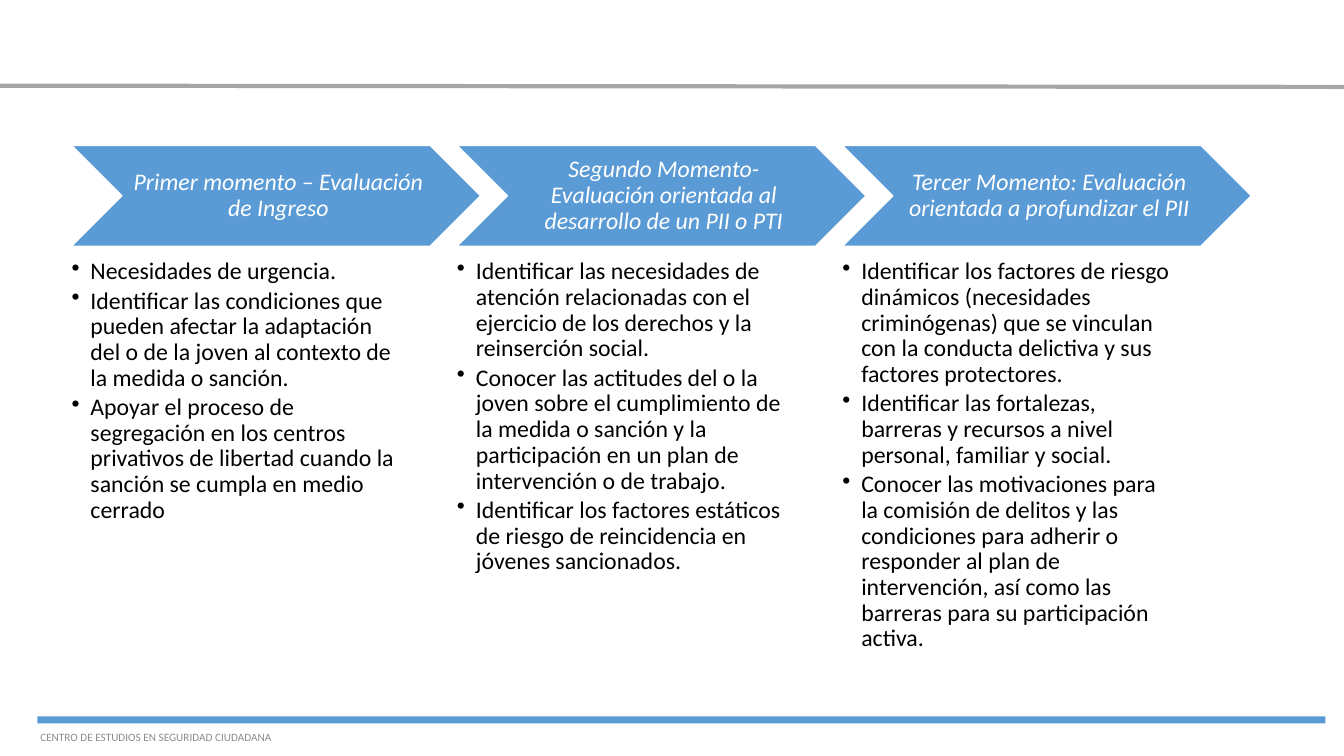
import pptx
import pptx.util
import pptx.dml.color
import pptx.enum.shapes
import pptx.enum.text
from lxml import etree

Pt = pptx.util.Pt
RGBColor = pptx.dml.color.RGBColor
MSO_SHAPE = pptx.enum.shapes.MSO_SHAPE
PP_ALIGN = pptx.enum.text.PP_ALIGN
MSO_ANCHOR = pptx.enum.text.MSO_ANCHOR

BLUE = RGBColor(0x5B, 0x9B, 0xD5)
RULE_GRAY = RGBColor(0xA6, 0xA6, 0xA6)
FOOTER_GRAY = RGBColor(0x8C, 0x8C, 0x8C)
WHITE = RGBColor(0xFF, 0xFF, 0xFF)
BLACK = RGBColor(0x00, 0x00, 0x00)

FONT = "Calibri"
BODY_SIZE = 17
BULLET_INDENT = 13.5
SLIDE_WIDTH, SLIDE_HEIGHT = 960, 540

MOMENTS = [
    ("Primer momento – Evaluación de Ingreso", [
        "Necesidades de urgencia.",
        "Identificar las condiciones que pueden afectar la adaptación del o de la joven "
        "al contexto de la medida o sanción.",
        "Apoyar el proceso de segregación en los centros privativos de libertad cuando "
        "la sanción se cumpla en medio cerrado",
    ]),
    ("Segundo Momento- Evaluación orientada al desarrollo de un PII o PTI", [
        "Identificar las necesidades de atención relacionadas con el ejercicio de los "
        "derechos y la reinserción social.",
        "Conocer las actitudes del o la joven sobre el cumplimiento de la medida o sanción "
        "y la participación en un plan de intervención o de trabajo.",
        "Identificar los factores estáticos de riesgo de reincidencia en jóvenes sancionados.",
    ]),
    ("Tercer Momento: Evaluación orientada a profundizar el PII", [
        "Identificar los factores de riesgo dinámicos (necesidades criminógenas) que se "
        "vinculan con la conducta delictiva y sus factores protectores.",
        "Identificar las fortalezas, barreras y recursos a nivel personal, familiar y social.",
        "Conocer las motivaciones para la comisión de delitos y las condiciones para adherir "
        "o responder al plan de intervención, así como las barreras para su participación "
        "activa.",
    ]),
]


def set_frame(frame, left, top, right, bottom, anchor, wrap=True):
    frame.margin_left, frame.margin_top = Pt(left), Pt(top)
    frame.margin_right, frame.margin_bottom = Pt(right), Pt(bottom)
    frame.vertical_anchor = anchor
    frame.word_wrap = wrap


def add_run(paragraph, words, size, color, italic=False):
    run = paragraph.add_run()
    run.text = words
    run.font.name = FONT
    run.font.size = Pt(size)
    run.font.italic = italic
    run.font.color.rgb = color


def add_bullet(paragraph):
    properties = paragraph._p.get_or_add_pPr()
    properties.set("marL", str(Pt(BULLET_INDENT)))
    properties.set("indent", str(-Pt(BULLET_INDENT)))
    bullet = etree.SubElement(properties, pptx.oxml.ns.qn("a:buChar"))
    bullet.set("char", "•")


def add_header_rule(slide, left, top, width):
    rule = slide.shapes.add_connector(
        pptx.enum.shapes.MSO_CONNECTOR.STRAIGHT,
        Pt(left), Pt(top), Pt(left + width), Pt(top + 0.9))
    rule.line.color.rgb = RULE_GRAY
    rule.line.width = Pt(3)
    etree.SubElement(rule._element.spPr, pptx.oxml.ns.qn("a:effectLst"))


def add_footer(slide, left, top, width):
    bar = slide.shapes.add_shape(MSO_SHAPE.RECTANGLE, Pt(left), Pt(top), Pt(width), Pt(5))
    bar.shadow.inherit = False
    bar.fill.solid()
    bar.fill.fore_color.rgb = BLUE
    bar.line.fill.background()

    center_name = slide.shapes.add_textbox(Pt(left + 2), Pt(top + 7.4), Pt(180), Pt(14.4))
    frame = center_name.text_frame
    set_frame(frame, 0, 0, 7.2, 0, MSO_ANCHOR.MIDDLE, wrap=False)
    add_run(frame.paragraphs[0], "CENTRO DE ESTUDIOS EN SEGURIDAD CIUDADANA", 8, FOOTER_GRAY)


def add_moment(slide, left, top, width, title, goals):
    # Chevron with its title
    chevron = slide.shapes.add_shape(MSO_SHAPE.CHEVRON, Pt(left), Pt(top), Pt(width), Pt(72))
    chevron.shadow.inherit = False
    chevron.fill.solid()
    chevron.fill.fore_color.rgb = BLUE
    chevron.line.color.rgb = WHITE
    chevron.line.width = Pt(1)
    set_frame(chevron.text_frame, 5, 1.5, 1.5, 1.5, MSO_ANCHOR.MIDDLE)
    heading = chevron.text_frame.paragraphs[0]
    heading.alignment = PP_ALIGN.CENTER
    heading.line_spacing = 0.9
    add_run(heading, title, BODY_SIZE, WHITE, italic=True)

    # Goals below the chevron
    goal_list = slide.shapes.add_textbox(
        Pt(left), Pt(top + 81.3), Pt(width * 0.8), Pt(288))
    frame = goal_list.text_frame
    set_frame(frame, 0, 0, 0, 0, MSO_ANCHOR.TOP)
    for index, goal in enumerate(goals):
        paragraph = frame.add_paragraph() if index else frame.paragraphs[0]
        add_bullet(paragraph)
        paragraph.line_spacing = 0.9
        paragraph.space_after = Pt(2.55)
        add_run(paragraph, goal, BODY_SIZE, BLACK)


def add_moments(slide, left, top, width):
    chevron_width = 292.2
    pitch = (width - chevron_width) / (len(MOMENTS) - 1)
    for index, (title, goals) in enumerate(MOMENTS):
        add_moment(slide, left + index * pitch, top, chevron_width, title, goals)


def main():
    deck = pptx.Presentation()
    deck.slide_width, deck.slide_height = Pt(SLIDE_WIDTH), Pt(SLIDE_HEIGHT)
    slide = deck.slides.add_slide(deck.slide_layouts[6])
    add_footer(slide, 26.8, 511.7, 920)
    add_header_rule(slide, 0, 61.2, SLIDE_WIDTH)
    add_moments(slide, 51.1, 103.9, 842.8)
    deck.save("out.pptx")


if __name__ == "__main__":
    main()
